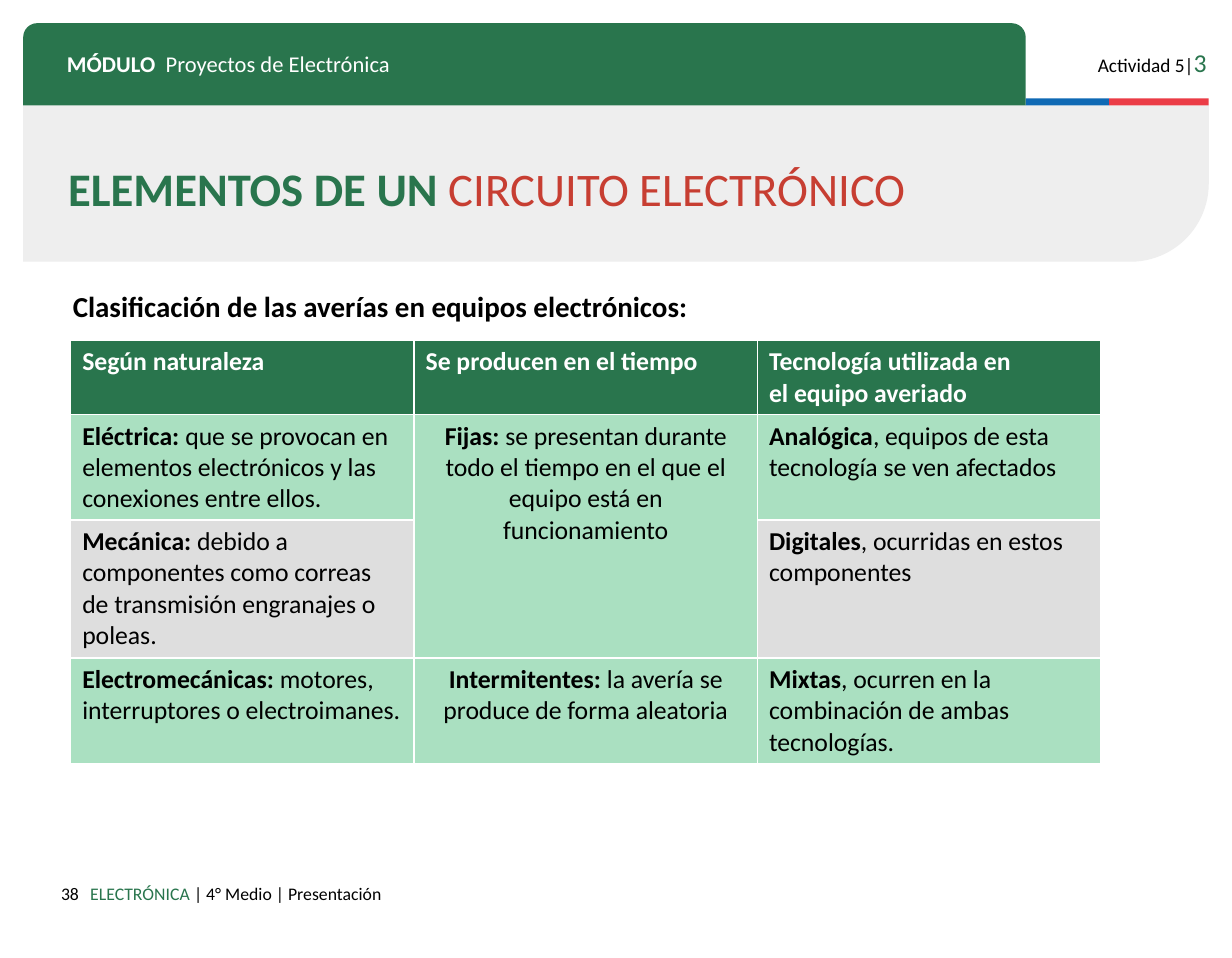
from dataclasses import dataclass
from lxml.etree import SubElement
from pptx import Presentation
from pptx.dml.color import RGBColor
from pptx.enum.shapes import MSO_SHAPE
from pptx.enum.text import MSO_ANCHOR, PP_ALIGN
from pptx.oxml.ns import qn
from pptx.util import Inches, Pt

COLUMNS, ROWS = 1063, 827
GRID = Inches(0.01)
FONT = "Calibri"
COLORS = {
    "green": "29754D", "mint": "AAE0C1", "silver": "DEDEDE", "panel": "EEEEEE",
    "blue": "0F69B4", "red": "EB3C46", "brick": "C73E32",
    "white": "FFFFFF", "black": "000000",
}
HEADINGS = [
    "Según naturaleza",
    "Se producen en el tiempo",
    "Tecnología utilizada en\nel equipo averiado",
]
FAULTS = [
    [("Eléctrica: ", "que se provocan en elementos electrónicos y las conexiones entre ellos."),
     ("Fijas: ", "se presentan durante todo el tiempo en el que el equipo está en funcionamiento"),
     ("Analógica", ", equipos de esta tecnología se ven afectados")],
    [("Mecánica: ", "debido a componentes como correas de transmisión engranajes o poleas."),
     None,
     ("Digitales", ", ocurridas en estos componentes")],
    [("Electromecánicas: ", "motores, interruptores o electroimanes."),
     ("Intermitentes: ", "la avería se produce de forma aleatoria"),
     ("Mixtas", ", ocurren en la combinación de ambas tecnologías.")],
]
ROW_HEIGHTS = [64, 91, 119, 91]
ROW_FILLS = ["green", "mint", "silver", "mint"]


@dataclass
class Box:
    """Area of the slide in grid columns and rows."""
    left: int
    top: int
    width: int
    height: int

    def area(self, left, top, width, height):
        """Return an area placed relative to this one."""
        return Box(self.left + left, self.top + top, width, height)

    def place(self):
        """Return left, top, width and height as slide lengths."""
        return [GRID * n for n in (self.left, self.top, self.width, self.height)]


def rgb(name):
    """Return the named colour."""
    return RGBColor.from_string(COLORS[name])


def add_block(slide, box, kind, color, *roundings):
    """Add a plain filled shape."""
    block = slide.shapes.add_shape(kind, *box.place())
    block.shadow.inherit = False
    block.fill.solid()
    block.fill.fore_color.rgb = rgb(color)
    block.line.fill.background()
    for index, rounding in enumerate(roundings):
        block.adjustments[index] = rounding
    return block


def add_runs(paragraph, runs):
    """Write runs given as text, size, colour and boldness."""
    for words, size, color, bold in runs:
        for index, line in enumerate(words.split("\n")):
            if index:
                paragraph.add_line_break()
            run = paragraph.add_run()
            run.text = line
            run.font.name = FONT
            run.font.size = Pt(size)
            run.font.bold = bold
            run.font.color.rgb = rgb(color)


def add_label(slide, box, runs, align=PP_ALIGN.LEFT, spacing=1.0, inset=0.1):
    """Add a one-paragraph text box."""
    frame = slide.shapes.add_textbox(*box.place()).text_frame
    frame.word_wrap = True
    frame.vertical_anchor = MSO_ANCHOR.TOP
    frame.margin_left = frame.margin_right = Inches(0.1)
    frame.margin_top = frame.margin_bottom = Inches(inset)
    paragraph = frame.paragraphs[0]
    paragraph.alignment = align
    paragraph.line_spacing = spacing
    add_runs(paragraph, runs)


def add_title_panel(slide, box):
    """Add the grey panel with the slide title."""
    panel = add_block(slide, box, MSO_SHAPE.ROUND_1_RECTANGLE, "panel", 0.5)
    panel.element.spPr.get_or_add_xfrm().set("flipV", "1")
    add_label(slide, box.area(29, 42, 988, 58), [
        ("ELEMENTOS DE UN ", 29, "green", True),
        ("CIRCUITO ELECTRÓNICO", 29, "brick", False),
    ], inset=0.05)


def add_header(slide, box):
    """Add the module band, the flag bars and the activity number."""
    add_block(slide, box.area(865, 65, 72, 6), MSO_SHAPE.RECTANGLE, "blue")
    add_block(slide, box.area(937, 65, 86, 6), MSO_SHAPE.RECTANGLE, "red")
    add_block(slide, box.area(0, 0, 865, box.height),
              MSO_SHAPE.ROUND_2_SAME_RECTANGLE, "green", 0.17, 0)
    add_label(slide, box.area(28, 18, 814, 35), [
        ("MÓDULO ", 14, "white", True),
        (" Proyectos de Electrónica", 14, "white", False),
    ], spacing=0.8)
    add_label(slide, box.area(903, 10, 128, 38), [
        ("Actividad 5|", 12, "black", False),
        ("3", 16, "green", False),
    ], PP_ALIGN.RIGHT)


def style_cell(cell, color):
    """Give a cell its fill, margins and white borders."""
    properties = cell._tc.get_or_add_tcPr()
    for side in ("a:lnL", "a:lnR", "a:lnT", "a:lnB"):
        border = SubElement(properties, qn(side), w=str(Pt(0.96)))
        fill = SubElement(border, qn("a:solidFill"))
        SubElement(fill, qn("a:srgbClr"), val=COLORS["white"])
    cell.fill.solid()
    cell.fill.fore_color.rgb = rgb(color)
    cell.margin_left = cell.margin_right = Inches(0.1)
    cell.margin_top = cell.margin_bottom = Inches(0.05)


def add_fault_table(slide, box):
    """Add the table of fault classes."""
    table = slide.shapes.add_table(len(ROW_HEIGHTS), len(HEADINGS), *box.place()).table
    table.first_row = table.horz_banding = False
    for column in table.columns:
        column.width = GRID * box.width // len(HEADINGS)
    rows = [[[(heading, 16, "white", True)] for heading in HEADINGS]]
    rows += [[fault and [(fault[0], 16, "black", True), (fault[1], 16, "black", False)]
              for fault in faults] for faults in FAULTS]
    for row, runs_by_column in enumerate(rows):
        table.rows[row].height = GRID * ROW_HEIGHTS[row]
        for column, runs in enumerate(runs_by_column):
            cell = table.cell(row, column)
            style_cell(cell, ROW_FILLS[row])
            if runs:
                paragraph = cell.text_frame.paragraphs[0]
                centred = row > 0 and column == 1
                paragraph.alignment = PP_ALIGN.CENTER if centred else PP_ALIGN.LEFT
                add_runs(paragraph, runs)
    table.cell(1, 1).merge(table.cell(2, 1))


def add_content(slide, box):
    """Add the heading and the table under it."""
    add_label(slide, box.area(0, 0, 696, 57), [
        ("Clasificación de las averías en equipos electrónicos:", 18, "black", True),
    ], spacing=0.9, inset=0.05)
    add_fault_table(slide, box.area(8, 46, 889, sum(ROW_HEIGHTS)))


def add_footer(slide, box):
    """Add the page number and the course line."""
    add_label(slide, box.area(0, 0, 58, 29), [("38", 11, "black", False)], PP_ALIGN.RIGHT)
    add_label(slide, box.area(48, 0, 715, box.height), [
        ("ELECTRÓNICA ", 11, "green", False),
        ("| 4° Medio | Presentación", 11, "black", False),
    ])


def main():
    """Build and save the slide."""
    deck = Presentation()
    deck.slide_width, deck.slide_height = GRID * COLUMNS, GRID * ROWS
    slide = deck.slides.add_slide(deck.slide_layouts[6])
    add_title_panel(slide, Box(20, 91, 1023, 135))
    add_header(slide, Box(20, 20, 1023, 71))
    add_content(slide, Box(53, 248, 897, 411))
    add_footer(slide, Box(20, 753, 763, 38))
    deck.save("out.pptx")


if __name__ == "__main__":
    main()
